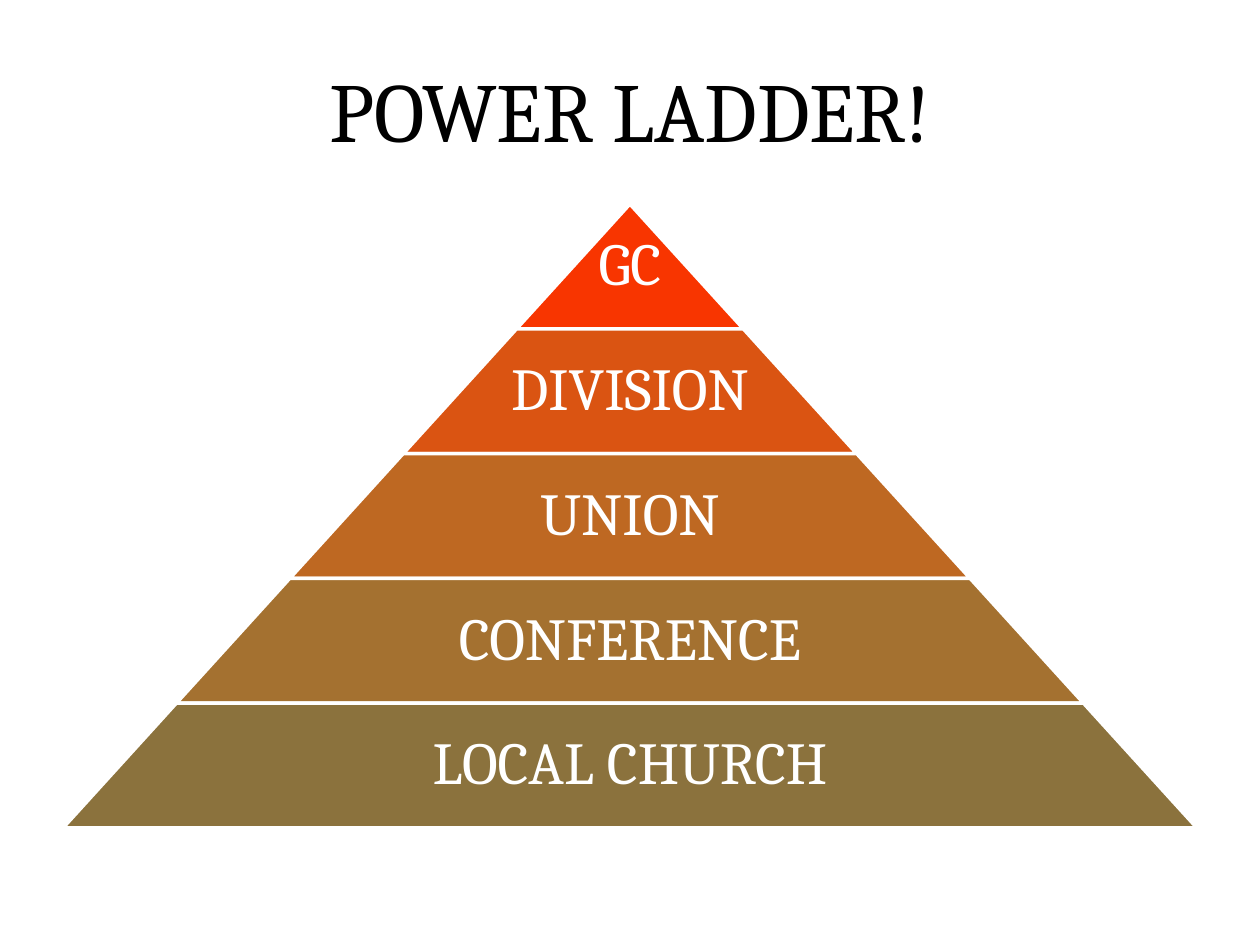
from dataclasses import dataclass

from pptx import Presentation
from pptx import util as u
from pptx.dml.color import RGBColor
from pptx.enum import shapes, text

HUES = {
    "red": "F83500",
    "orange": "DA5412",
    "rust": "BE6822",
    "brown": "A47130",
    "olive": "8B723D",
    "white": "FFFFFF",
    "black": "000000",
}
WIDE, HIGH = 720, 540
TOP, STEP, RISE = 116.6, 129.6, 71.3
FRAME = {
    "word_wrap": True,
    "auto_size": text.MSO_AUTO_SIZE.NONE,
    "vertical_anchor": text.MSO_ANCHOR.MIDDLE,
}
SIDES = ("left", "right", "top", "bottom")
INSET = {f"margin_{side}": u.Pt(3.6) for side in SIDES}


@dataclass
class Tier:
    label: str
    hue: str
    share: float = 0.65


TIERS = [
    Tier("GC", "red", 1),
    Tier("DIVISION", "orange"),
    Tier("UNION", "rust"),
    Tier("CONFERENCE", "brown"),
    Tier("LOCAL CHURCH", "olive"),
]


def color(hue: str) -> RGBColor:
    return RGBColor.from_string(HUES[hue])


def apply(item, form: dict) -> None:
    for key, value in form.items():
        setattr(item, key, value)


def center(width: float, top: float, height: float) -> tuple:
    return tuple(u.Pt(n) for n in ((WIDE - width) / 2, top, width, height))


def write(frame, words: str, size: float, hue: str, form: dict) -> None:
    apply(frame, FRAME | form)
    para = frame.paragraphs[0]
    para.alignment = text.PP_ALIGN.CENTER
    run = para.add_run()
    run.text = words
    apply(run.font, {"name": "Cambria", "size": u.Pt(size), "bold": False})
    run.font.color.rgb = color(hue)
    if form:
        para.line_spacing = 0.9


def draw(slide, tier: Tier, rank: int) -> None:
    width, top = STEP * (rank + 1), TOP + RISE * rank
    band = slide.shapes.add_shape(
        shapes.MSO_SHAPE.TRAPEZOID, *center(width, top, RISE)
    )
    band.adjustments[0] = STEP / 2 / RISE
    band.shadow.inherit = False
    band.fill.solid()
    band.fill.fore_color.rgb = color(tier.hue)
    band.line.color.rgb = color("white")
    band.line.width = u.Pt(2)
    box = slide.shapes.add_textbox(*center(width * tier.share, top, RISE))
    write(box.text_frame, tier.label, 34, "white", INSET)


def main() -> None:
    deck = Presentation()
    apply(deck, {"slide_width": u.Pt(WIDE), "slide_height": u.Pt(HIGH)})
    slide = deck.slides.add_slide(deck.slide_layouts[5])
    title = slide.shapes.title
    place = center(599, 6.5, 111.6)
    apply(title, dict(zip(("left", "top", "width", "height"), place)))
    write(title.text_frame, "POWER LADDER!", 48, "black", {})
    for rank, tier in enumerate(TIERS):
        draw(slide, tier, rank)
    deck.save("out.pptx")


if __name__ == "__main__":
    main()
